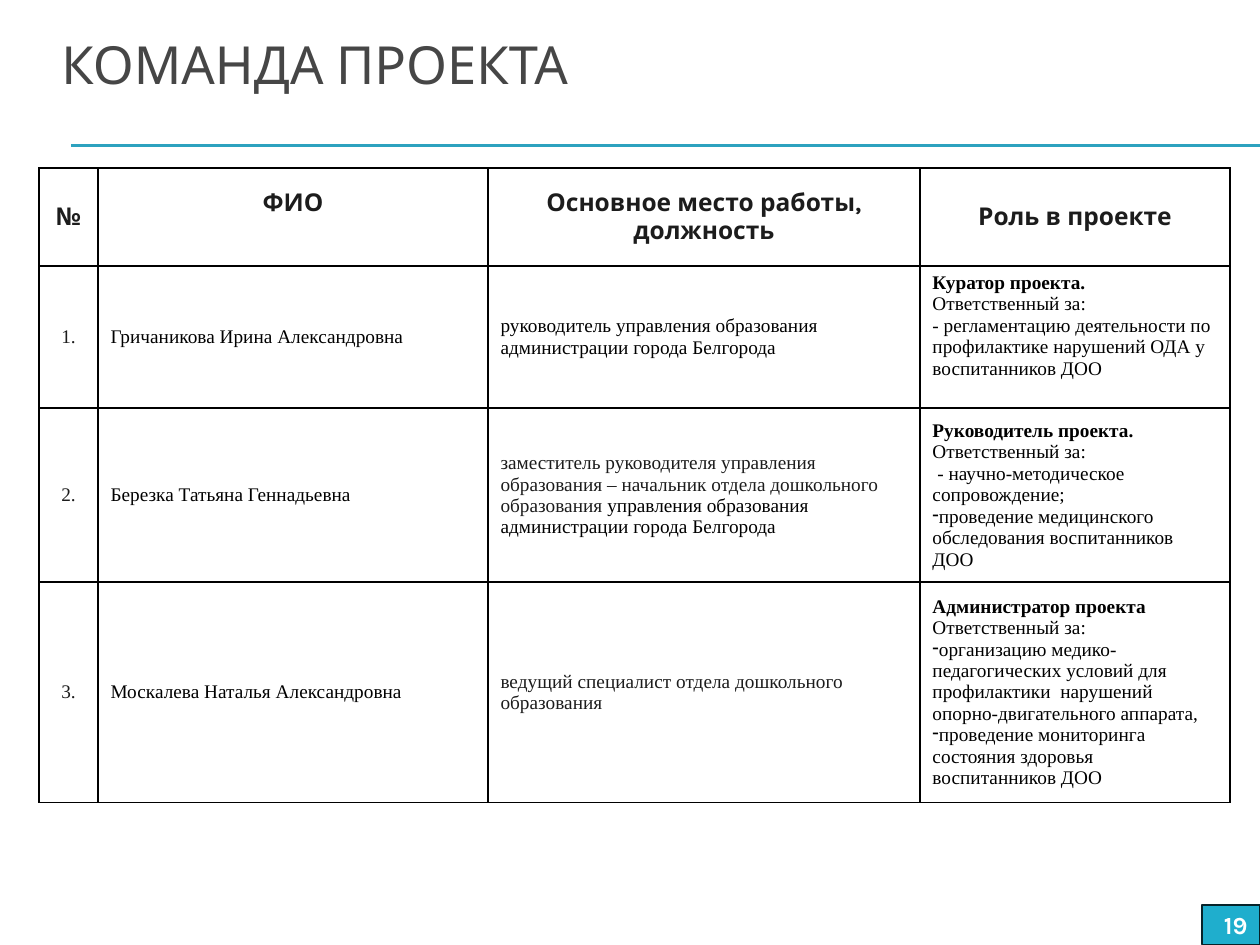
from dataclasses import dataclass

from lxml import etree
from pptx import Presentation
from pptx.dml.color import RGBColor
from pptx.enum.shapes import MSO_CONNECTOR, MSO_SHAPE
from pptx.enum.text import MSO_ANCHOR, PP_ALIGN
from pptx.oxml.ns import qn
from pptx.util import Pt

PX = 914400 // 126
LEFT, CENTER, RIGHT = PP_ALIGN.LEFT, PP_ALIGN.CENTER, PP_ALIGN.RIGHT
TOP, MIDDLE = MSO_ANCHOR.TOP, MSO_ANCHOR.MIDDLE
HEADING_FONT, BODY_FONT = "Karla", "Times New Roman"
COLORS = {
    "title": "464646",
    "rule": "2DA2BF",
    "dark": "1C1C1C",
    "black": "000000",
    "white": "FFFFFF",
    "badge": "1FAECD",
    "badge_line": "062329",
}


@dataclass(frozen=True)
class Span:
    text: str
    color: str = "black"
    bold: bool = False
    size: int = 11
    font: str = BODY_FONT


@dataclass(frozen=True)
class Line:
    spans: tuple[Span, ...]
    align: PP_ALIGN = LEFT
    dash: bool = False


@dataclass(frozen=True)
class Entry:
    lines: tuple[Line, ...]
    anchor: MSO_ANCHOR = MIDDLE
    bottom: int = 6


def rgb(name: str) -> RGBColor:
    return RGBColor.from_string(COLORS[name])


def plain(text: str, color: str = "black", bold: bool = False, dash: bool = False) -> Line:
    return Line((Span(text, color, bold),), dash=dash)


def heading(text: str, bottom: int = 6) -> Entry:
    return Entry((Line((Span(text, "dark", True, 14, HEADING_FONT),), CENTER),), bottom=bottom)


def number(text: str) -> Entry:
    return Entry((Line((Span(text, "dark"),), CENTER),))


def write(frame, lines: tuple[Line, ...]) -> None:
    frame.word_wrap = True
    for index, line in enumerate(lines):
        paragraph = frame.paragraphs[0] if index == 0 else frame.add_paragraph()
        paragraph.alignment = line.align
        if line.dash:
            properties = paragraph._p.get_or_add_pPr()
            properties.set("marL", "0")
            properties.set("indent", "0")
            etree.SubElement(properties, qn("a:buChar")).set("char", "-")
        for span in line.spans:
            run = paragraph.add_run()
            run.text = span.text
            run.font.name = span.font
            run.font.size = Pt(span.size)
            run.font.bold = span.bold
            run.font.color.rgb = rgb(span.color)


def add_borders(cell) -> None:
    """Draw a 1 pt line on all four sides of the cell."""
    properties = cell._tc.get_or_add_tcPr()
    for index, side in enumerate(("lnL", "lnR", "lnT", "lnB")):
        border = etree.Element(qn(f"a:{side}"), w=str(Pt(1)))
        fill = etree.SubElement(border, qn("a:solidFill"))
        etree.SubElement(fill, qn("a:srgbClr")).set("val", COLORS["black"])
        properties.insert(index, border)


def add_rule(slide, y: int) -> None:
    rule = slide.shapes.add_connector(MSO_CONNECTOR.STRAIGHT, 71 * PX, y * PX, 1260 * PX, y * PX)
    rule.line.color.rgb = rgb("rule")
    rule.line.width = Pt(0.75)
    etree.SubElement(rule._element.spPr, qn("a:effectLst"))


def add_title(slide, text: str) -> None:
    title = slide.shapes.add_textbox(49 * PX, 20 * PX, 1190 * PX, 88 * PX)
    title.text_frame.vertical_anchor = MIDDLE
    write(title.text_frame, (Line((Span(text, "title", False, 30, HEADING_FONT),)),))


def add_team_table(slide, rows: tuple[tuple[Entry, ...], ...]) -> None:
    widths, heights = (59, 390, 432, 310), (98, 142, 164, 207)
    table = slide.shapes.add_table(
        len(heights), len(widths), 39 * PX, 168 * PX, sum(widths) * PX, sum(heights) * PX
    ).table
    table.first_row = table.horz_banding = False
    for column, width in zip(table.columns, widths):
        column.width = width * PX
    for row, height, entries in zip(table.rows, heights, rows):
        row.height = height * PX
        for cell, entry in zip(row.cells, entries):
            cell.fill.solid()
            cell.fill.fore_color.rgb = rgb("white")
            cell.vertical_anchor = entry.anchor
            cell.margin_bottom = entry.bottom * PX
            write(cell.text_frame, entry.lines)
            add_borders(cell)


def add_page_number(slide, text: str) -> None:
    badge = slide.shapes.add_shape(MSO_SHAPE.RECTANGLE, 1202 * PX, 905 * PX, 58 * PX, 40 * PX)
    badge.shadow.inherit = False
    badge.fill.solid()
    badge.fill.fore_color.rgb = rgb("badge")
    badge.line.color.rgb = rgb("badge_line")
    badge.line.width = Pt(0.75)
    badge.text_frame.vertical_anchor = MIDDLE
    write(badge.text_frame, (Line((Span(text, "white", True, 14, HEADING_FONT),), RIGHT),))


TEAM = (
    (
        heading("№"),
        heading("ФИО", bottom=34),
        heading("Основное место работы, должность"),
        heading("Роль в проекте"),
    ),
    (
        number("1."),
        Entry((plain("Гричаникова Ирина Александровна"),)),
        Entry((plain("руководитель управления образования администрации города Белгорода"),)),
        Entry((
            plain("Куратор проекта.", bold=True),
            plain("Ответственный за:"),
            plain("- регламентацию деятельности по профилактике нарушений ОДА у воспитанников ДОО"),
        ), TOP),
    ),
    (
        number("2."),
        Entry((plain("Березка Татьяна Геннадьевна"),)),
        Entry((Line((
            Span("заместитель руководителя управления образования – начальник отдела "
                 "дошкольного образования ", "dark"),
            Span("управления образования администрации города Белгорода"),
        )),)),
        Entry((
            Line((Span("Руководитель проекта. ", bold=True), Span("Ответственный за:"))),
            plain(" - научно-методическое сопровождение;"),
            plain("проведение медицинского обследования воспитанников ДОО", dash=True),
        )),
    ),
    (
        number("3."),
        Entry((plain("Москалева Наталья Александровна"),)),
        Entry((plain("ведущий специалист отдела дошкольного образования", "dark"),)),
        Entry((
            plain("Администратор проекта", bold=True),
            plain("Ответственный за:"),
            plain("организацию медико-педагогических условий для профилактики  нарушений "
                  "опорно-двигательного аппарата,", dash=True),
            plain("проведение мониторинга состояния здоровья воспитанников ДОО", dash=True),
        )),
    ),
)


def main() -> None:
    deck = Presentation()
    deck.slide_width, deck.slide_height = 1260 * PX, 945 * PX
    slide = deck.slides.add_slide(deck.slide_layouts[6])
    for y in (145, 146):
        add_rule(slide, y)
    add_title(slide, "КОМАНДА ПРОЕКТА")
    add_team_table(slide, TEAM)
    add_page_number(slide, "19")
    deck.save("out.pptx")


if __name__ == "__main__":
    main()
